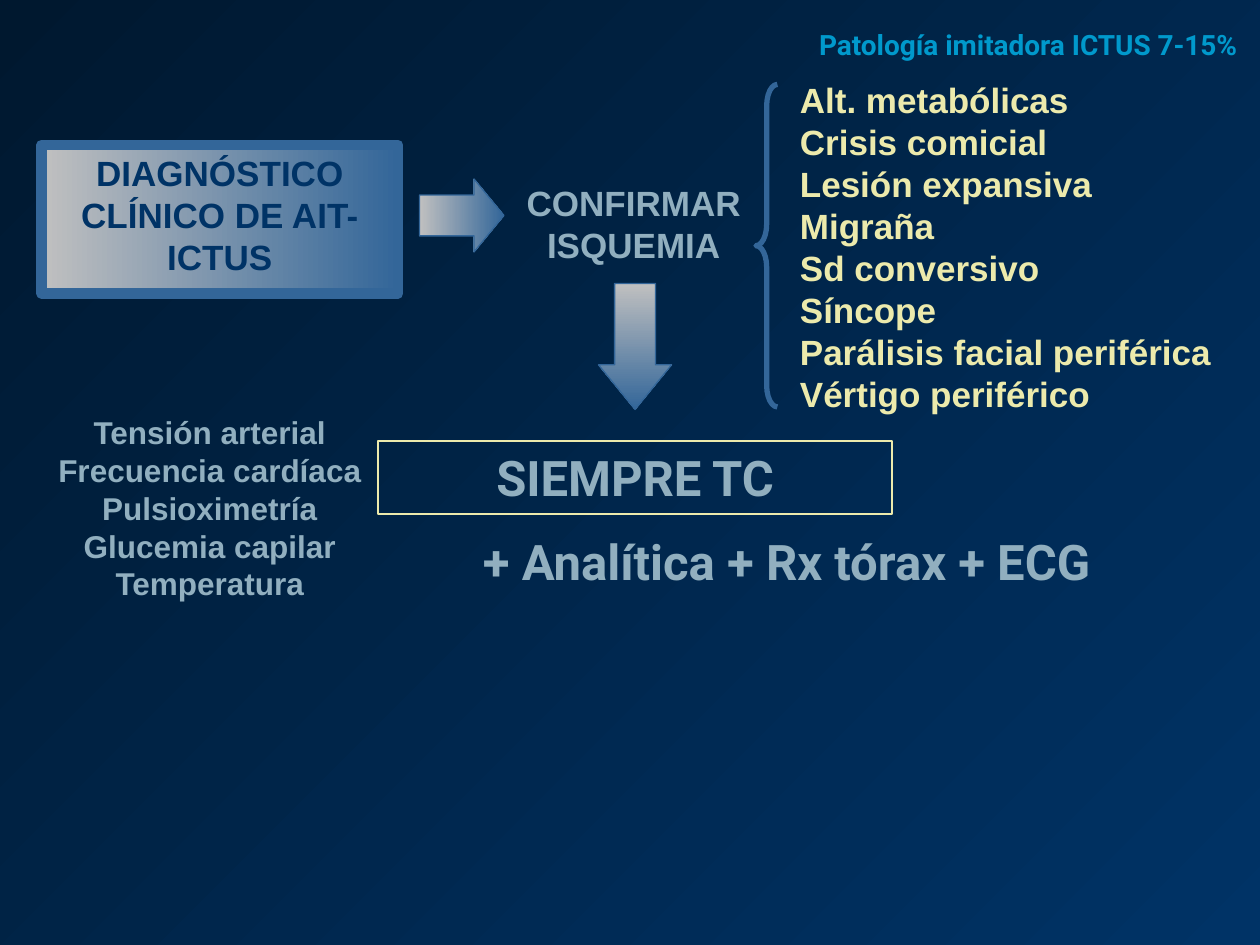
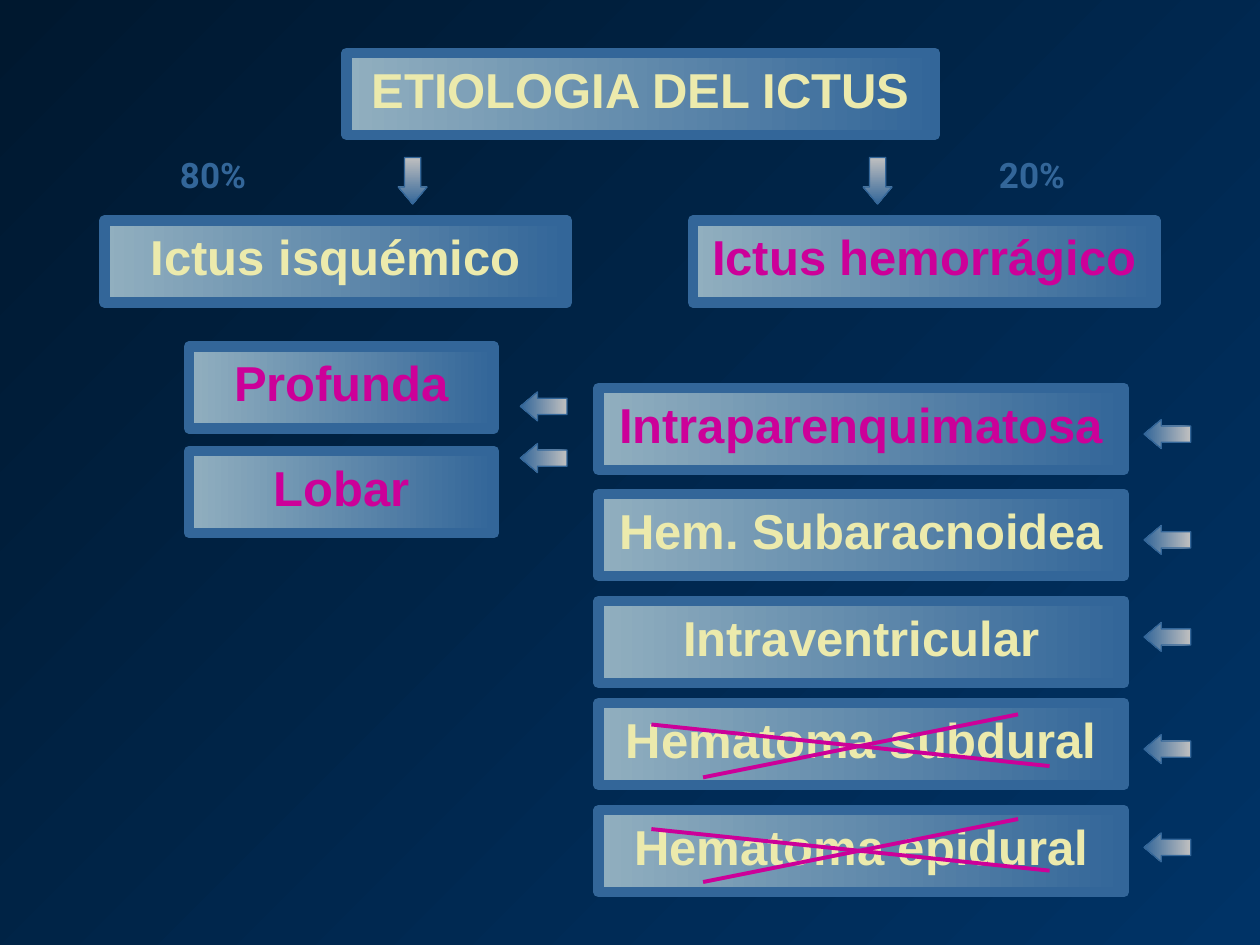
from dataclasses import dataclass

from lxml import etree
from pptx import Presentation
from pptx.dml.color import RGBColor
from pptx.enum.shapes import MSO_CONNECTOR, MSO_SHAPE
from pptx.enum.text import MSO_ANCHOR, PP_ALIGN
from pptx.oxml.ns import qn
from pptx.util import Inches, Pt

RECT, BRACE, ARROW = MSO_SHAPE.RECTANGLE, MSO_SHAPE.LEFT_BRACE, MSO_SHAPE.RIGHT_ARROW
LEFT, MID, RIGHT = PP_ALIGN.LEFT, PP_ALIGN.CENTER, PP_ALIGN.RIGHT
TOP = MSO_ANCHOR.TOP
STRAIGHT = MSO_CONNECTOR.STRAIGHT


@dataclass(frozen=True)
class Theme:
    """Colours, fonts and type sizes of the deck."""
    night: str = "00182F"
    navy: str = "003366"
    blue: str = "336699"
    cyan: str = "0099CC"
    mist: str = "91AFBF"
    grey: str = "C0C0C0"
    cream: str = "ECEAAC"
    pink: str = "CC0099"
    sans: str = "Arial"
    round: str = "Roboto"
    big: int = 28
    body: int = 20
    small: int = 18
    note: int = 16
    lead: float = 1.2


T = Theme()


def inset(box, left, top, wide, high):
    """Return a part's box, placed from the corner of its region."""
    return box[0] + left, box[1] + top, wide, high


def fade(fill, first, last, angle=0):
    """Fill with a linear blend of two colours."""
    fill.gradient()
    fill.gradient_angle = angle
    for stop, tone in zip(fill.gradient_stops, (first, last)):
        stop.color.rgb = RGBColor.from_string(tone)


def write(frame, text, size=T.body, color=T.mist, font=T.sans, align=MID):
    """Write bold lines of text into a frame."""
    frame.word_wrap = True
    frame.vertical_anchor = TOP
    frame.text = text
    for para in frame.paragraphs:
        para.alignment = align
        para.line_spacing = Pt(size * T.lead)
        face = para.runs[0].font
        face.name, face.size, face.bold = font, Pt(size), True
        face.color.rgb = RGBColor.from_string(color)


def label(slide, box, text, **style):
    """Add a text box."""
    write(slide.shapes.add_textbox(*map(Inches, box)).text_frame, text, **style)


def shape(slide, kind, box, blend=None, line=T.blue, width=0.75):
    """Add an outlined shape, blended or hollow."""
    item = slide.shapes.add_shape(kind, *map(Inches, box))
    item.shadow.inherit = False
    if blend:
        fade(item.fill, *blend)
    else:
        item.fill.background()
    item.line.color.rgb = RGBColor.from_string(line)
    item.line.width = Pt(width)
    return item


def panel(slide, box, text, start=T.mist, **style):
    """Add a framed box with a blended fill."""
    item = shape(slide, RECT, box, (start, T.blue), width=6)
    write(item.text_frame, text, **style)


def arrow(slide, box, turn=0, head=0.59):
    """Add a blended arrow, turned clockwise from pointing right."""
    item = shape(slide, ARROW, box, (T.grey, T.blue))
    item.adjustments[0], item.adjustments[1] = 0.56, head
    item.rotation = turn


def cross(slide, box):
    """Strike out a region with two slanted lines."""
    left, top, wide, high = box
    strokes = ((0, 0.08, wide, 0.41), (wide - 0.25, 0, 0.41, high))
    for x1, y1, x2, y2 in strokes:
        ends = left + x1, top + y1, left + x2, top + y2
        link = slide.shapes.add_connector(STRAIGHT, *map(Inches, ends))
        link.line.color.rgb = RGBColor.from_string(T.pink)
        link.line.width = Pt(2.25)
        etree.SubElement(link._element.spPr, qn("a:effectLst"))


def flow(slide, box):
    """Draw the path from diagnosis to confirmation."""
    panel(slide, inset(box, 0, 0, 2.83, 1.18), "DIAGNÓSTICO CLÍNICO DE AIT-ICTUS",
          start=T.grey, color=T.navy)
    arrow(slide, inset(box, 3, 0.27, 0.67, 0.58), head=0.41)
    label(slide, inset(box, 3.73, 0.24, 1.94, 0.77), "CONFIRMAR ISQUEMIA")
    arrow(slide, inset(box, 4.21, 1.31, 1, 0.58), 90, head=0.61)


def mimics(slide, box):
    """List the conditions that imitate a stroke."""
    label(slide, inset(box, 0, 0, 4.17, 0.37), "Patología imitadora ICTUS 7-15%",
          size=T.note, color=T.cyan, font=T.round, align=RIGHT)
    brace = shape(slide, BRACE, inset(box, 0.25, 0.5, 0.17, 2.56), width=3)
    brace.adjustments[0] = 1
    names = ("Alt. metabólicas", "Crisis comicial", "Lesión expansiva", "Migraña",
             "Sd conversivo", "Síncope", "Parálisis facial periférica",
             "Vértigo periférico")
    label(slide, inset(box, 0.5, 0.4, 3.75, 2.77), "\n".join(names),
          color=T.cream, align=LEFT)


def exams(slide, box):
    """Show the vital signs beside the tests to order."""
    signs = ("Tensión arterial", "Frecuencia cardíaca", "Pulsioximetría",
             "Glucemia capilar", "Temperatura")
    label(slide, inset(box, 0, 0, 2.67, 1.6), "\n".join(signs), size=T.small)
    scan = shape(slide, RECT, inset(box, 2.67, 0.27, 4.08, 0.58), line=T.cream)
    write(scan.text_frame, "SIEMPRE TC", size=T.big, font=T.round)
    label(slide, inset(box, 2.5, 0.94, 5.92, 0.58), "+ Analítica + Rx tórax + ECG",
          size=T.big, font=T.round, align=RIGHT)


def types(slide, box):
    """Split the title into the two main types of stroke."""
    high = 0.65
    panel(slide, inset(box, 1.92, 0, 4.67, high), "ETIOLOGIA DEL ICTUS",
          size=T.big, color=T.cream)
    sides = (("Ictus isquémico", T.cream, 0, 2.26, "80%", 0.5),
             ("Ictus hemorrágico", T.pink, 4.67, 5.95, "20%", 7))
    for name, tone, left, tip, share, mark in sides:
        panel(slide, inset(box, left, 1.33, 3.67, high), name,
              size=T.big, color=tone)
        arrow(slide, inset(box, tip, 0.9, 0.37, 0.23), 90)
        label(slide, inset(box, mark, 0.75, 1.08, 0.43), share,
              color=T.blue, font=T.round, align=LEFT)


def sites(slide, box, rows, tip):
    """Stack named panels with an arrow to the right of each region."""
    wide = box[2]
    for name, tone, top, point in rows:
        panel(slide, inset(box, 0, top, wide, 0.65), name, size=T.big, color=tone)
        arrow(slide, inset(box, wide + tip, point, 0.37, 0.23), 180)


def page(deck):
    """Add a blank slide with the shared background."""
    slide = deck.slides.add_slide(deck.slide_layouts[6])
    fade(slide.background.fill, T.night, T.navy, 315)
    return slide


def main():
    """Build and save the deck."""
    deck = Presentation()
    deck.slide_width, deck.slide_height = Inches(10), Inches(7.5)

    slide = page(deck)
    flow(slide, (0.33, 1.15))
    mimics(slide, (5.75, 0.17))
    exams(slide, (0.33, 3.23))

    slide = page(deck)
    types(slide, (0.83, 0.42))
    sites(slide, (1.5, 2.75, 2.42), (
        ("Profunda", T.pink, 0, 0.36),
        ("Lobar", T.pink, 0.83, 0.77)), 0.21)
    sites(slide, (4.75, 3.08, 4.17), (
        ("Intraparenquimatosa", T.pink, 0, 0.25),
        ("Hem. Subaracnoidea", T.cream, 0.84, 1.09),
        ("Intraventricular", T.cream, 1.69, 1.86),
        ("Hematoma subdural", T.cream, 2.5, 2.75),
        ("Hematoma epidural", T.cream, 3.35, 3.53)), 0.16)
    for top in (5.67, 6.5):
        cross(slide, (5.17, top, 3.16, 0.5))
    deck.save("out.pptx")


if __name__ == "__main__":
    main()
